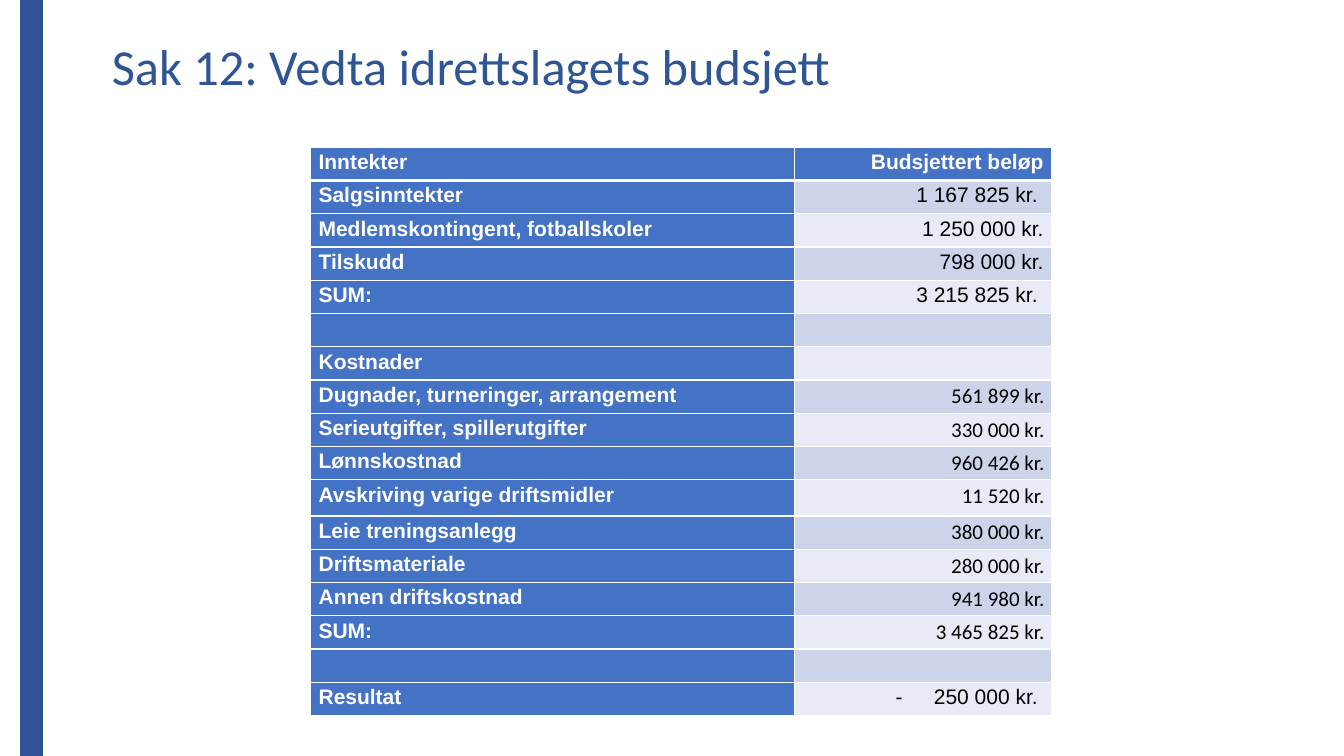
from dataclasses import dataclass

from lxml import etree
from pptx import Presentation
from pptx.dml.color import RGBColor
from pptx.enum.shapes import MSO_SHAPE
from pptx.enum.text import PP_ALIGN
from pptx.oxml.ns import qn
from pptx.slide import Slide
from pptx.table import _Cell
from pptx.text.text import _Paragraph
from pptx.util import Inches, Pt

RECTANGLE = MSO_SHAPE.RECTANGLE
LEFT = PP_ALIGN.LEFT
RIGHT = PP_ALIGN.RIGHT


@dataclass(frozen=True)
class Theme:
    heading: str = "2F5597"
    bar: str = "2F5496"
    bar_edge: str = "31538F"
    label_fill: str = "4472C4"
    bands: tuple[str, str] = ("E8EBF5", "CDD4EA")
    white: str = "FFFFFF"
    black: str = "000000"
    sans: str = "Arial"
    humanist: str = "Calibri"
    heading_size: float = 36
    table_size: float = 15
    grid_width: float = 1
    header_rule_width: float = 3


@dataclass(frozen=True)
class BudgetLine:
    label: str = ""
    amount: str = ""
    is_cost: bool = False
    is_negative: bool = False
    height: float = 0.33


THEME = Theme()
COLUMN_WIDTHS = (4.8, 2.55)
BUDGET = (
    BudgetLine("Inntekter", "Budsjettert beløp"),
    BudgetLine("Salgsinntekter", "1 167 825 kr. "),
    BudgetLine("Medlemskontingent, fotballskoler", "1 250 000 kr."),
    BudgetLine("Tilskudd", "798 000 kr."),
    BudgetLine("SUM:", "3 215 825 kr. "),
    BudgetLine(),
    BudgetLine("Kostnader"),
    BudgetLine("Dugnader, turneringer, arrangement", "561 899 kr.", is_cost=True),
    BudgetLine("Serieutgifter, spillerutgifter", "330 000 kr.", is_cost=True),
    BudgetLine("Lønnskostnad", "960 426 kr.", is_cost=True),
    BudgetLine("Avskriving varige driftsmidler", "11 520 kr.", is_cost=True, height=0.36),
    BudgetLine("Leie treningsanlegg", "380 000 kr.", is_cost=True),
    BudgetLine("Driftsmateriale", "280 000 kr.", is_cost=True),
    BudgetLine("Annen driftskostnad", "941 980 kr.", is_cost=True),
    BudgetLine("SUM:", "3 465 825 kr.", is_cost=True),
    BudgetLine(),
    BudgetLine("Resultat", "250 000 kr. ", is_negative=True),
)


def rgb(value: str) -> RGBColor:
    return RGBColor.from_string(value)


def style_runs(paragraph: _Paragraph, font: str, size: float, color: str, bold: bool = False) -> None:
    for run in paragraph.runs:
        run.font.name = font
        run.font.size = Pt(size)
        run.font.color.rgb = rgb(color)
        run.font.bold = bold


def add_dash_bullet(paragraph: _Paragraph) -> None:
    properties = paragraph._p.get_or_add_pPr()
    properties.set("marL", str(Inches(0.38)))
    properties.set("indent", str(Inches(-0.38)))
    bullet_color = etree.SubElement(properties, qn("a:buClr"))
    etree.SubElement(bullet_color, qn("a:srgbClr"), val=THEME.black)
    etree.SubElement(properties, qn("a:buFont"), typeface=THEME.sans)
    etree.SubElement(properties, qn("a:buChar"), char="-")


def add_borders(cell: _Cell, row: int) -> None:
    properties = cell._tc.get_or_add_tcPr()
    for side in ("L", "R", "T", "B"):
        is_header_rule = (row, side) in ((0, "B"), (1, "T"))
        width = THEME.header_rule_width if is_header_rule else THEME.grid_width
        border = etree.SubElement(properties, qn(f"a:ln{side}"), w=str(Pt(width)))
        border_fill = etree.SubElement(border, qn("a:solidFill"))
        etree.SubElement(border_fill, qn("a:srgbClr"), val=THEME.white)


def fill_cell(cell: _Cell, line: BudgetLine, row: int, is_amount: bool) -> None:
    is_banded = is_amount and row > 0
    is_cost_amount = is_amount and line.is_cost
    add_borders(cell, row)
    cell.fill.solid()
    cell.fill.fore_color.rgb = rgb(THEME.bands[row % 2] if is_banded else THEME.label_fill)
    cell.margin_left = cell.margin_right = Inches(0.07 if is_cost_amount else 0.08)
    cell.margin_top = cell.margin_bottom = Inches(0)
    cell.text_frame.text = line.amount if is_amount else line.label
    paragraph = cell.text_frame.paragraphs[0]
    paragraph.alignment = RIGHT if is_amount else LEFT
    paragraph.line_spacing = 1.15
    if is_cost_amount:
        paragraph.space_after = Pt(10)
    if is_amount and line.is_negative:
        add_dash_bullet(paragraph)
    style_runs(
        paragraph,
        THEME.humanist if is_cost_amount else THEME.sans,
        THEME.table_size,
        THEME.black if is_banded else THEME.white,
        bold=not is_banded,
    )


def add_heading(slide: Slide, text: str) -> None:
    heading = slide.shapes.add_textbox(Inches(0.89), Inches(0.37), Inches(9.02), Inches(0.8))
    heading.text_frame.word_wrap = True
    heading.text_frame.text = text
    paragraph = heading.text_frame.paragraphs[0]
    paragraph.line_spacing = 0.9
    paragraph._p.get_or_add_pPr().set("marL", str(Inches(0.12)))
    style_runs(paragraph, THEME.humanist, THEME.heading_size, THEME.heading)


def add_side_bar(slide: Slide) -> None:
    bar = slide.shapes.add_shape(RECTANGLE, Inches(0.21), Inches(-0.16), Inches(0.21), Inches(7.83))
    bar.shadow.inherit = False
    bar.fill.solid()
    bar.fill.fore_color.rgb = rgb(THEME.bar)
    bar.line.color.rgb = rgb(THEME.bar_edge)
    bar.line.width = Pt(1)


def add_budget(slide: Slide) -> None:
    budget = slide.shapes.add_table(
        len(BUDGET), len(COLUMN_WIDTHS), Inches(3.08), Inches(1.46),
        Inches(sum(COLUMN_WIDTHS)), Inches(sum(line.height for line in BUDGET)),
    ).table
    for column, width in zip(budget.columns, COLUMN_WIDTHS):
        column.width = Inches(width)
    for row, line in enumerate(BUDGET):
        budget.rows[row].height = Inches(line.height)
        for column in range(len(COLUMN_WIDTHS)):
            fill_cell(budget.cell(row, column), line, row, is_amount=column == 1)


def main() -> None:
    presentation = Presentation()
    presentation.slide_width = Inches(13.33)
    presentation.slide_height = Inches(7.5)
    slide = presentation.slides.add_slide(presentation.slide_layouts[6])
    add_heading(slide, "Sak 12: Vedta idrettslagets budsjett")
    add_side_bar(slide)
    add_budget(slide)
    presentation.save("out.pptx")


if __name__ == "__main__":
    main()
